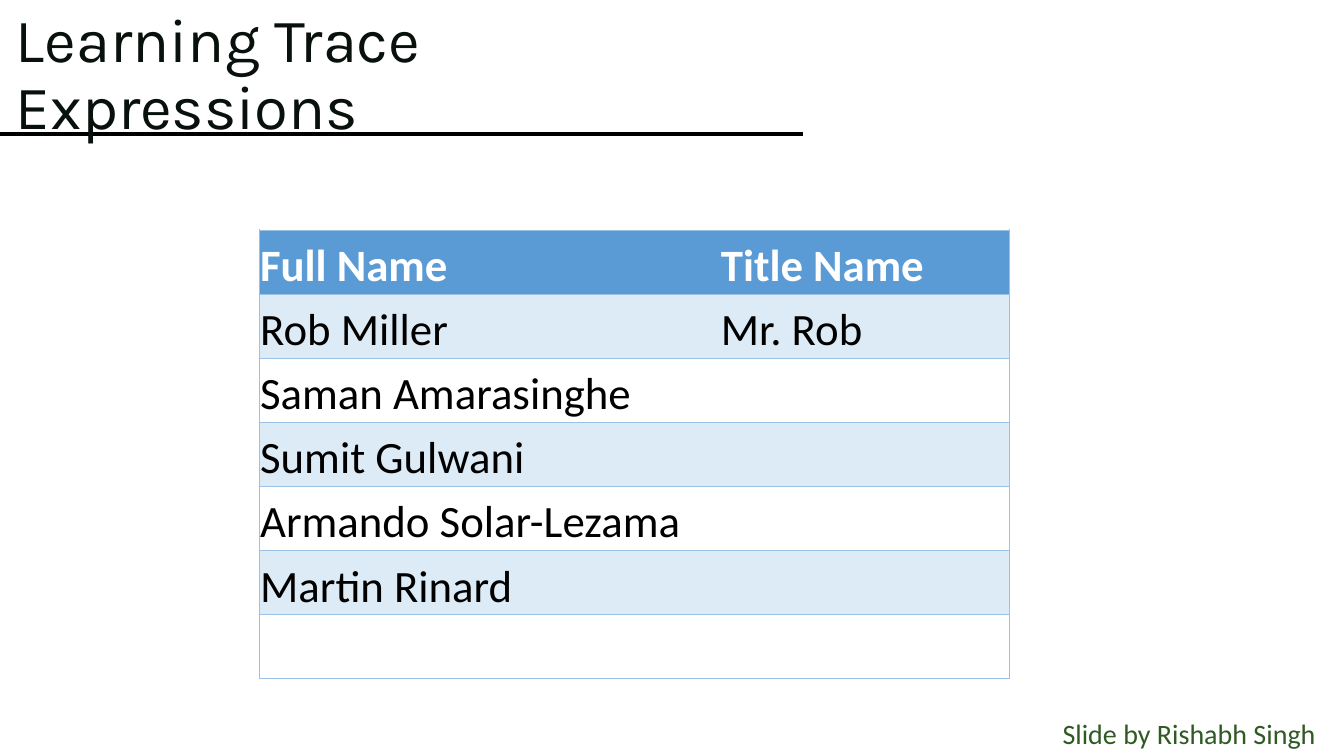
from lxml import etree
from pptx import Presentation
from pptx.dml.color import RGBColor
from pptx.enum.shapes import MSO_CONNECTOR
from pptx.enum.text import MSO_ANCHOR, MSO_AUTO_SIZE
from pptx.oxml.ns import qn
from pptx.util import Inches, Pt

COLORS = {
    "title": "08110B",
    "rule": "000000",
    "header": "5B9BD5",
    "header_text": "FFFFFF",
    "band": "DDEBF7",
    "body_text": "000000",
    "border": "9BC2E6",
    "credit": "2F5A24",
}
NO_STYLE = "{2D5ABB26-0587-4C30-8999-92F81FD0307C}"
NAMES = [
    ("Full Name", "Title Name"),
    ("Rob Miller", "Mr. Rob"),
    ("Saman Amarasinghe", ""),
    ("Sumit Gulwani", ""),
    ("Armando Solar-Lezama", ""),
    ("Martin Rinard", ""),
    ("", ""),
]


def color(name):
    return RGBColor.from_string(COLORS[name])


def add_run(paragraph, text, size, font, color_name, bold=False):
    run = paragraph.add_run()
    run.text = text
    run.font.size = Pt(size)
    run.font.name = font
    run.font.bold = bold
    run.font.color.rgb = color(color_name)


def add_title(slide, left, top, width, height):
    """Heading with the rule that starts at the slide edge."""
    rule_y = Inches(top + 1.3)
    rule = slide.shapes.add_connector(
        MSO_CONNECTOR.STRAIGHT, 0, rule_y, Inches(7.96), rule_y)
    rule.line.color.rgb = color("rule")
    rule.line.width = Pt(2.25)
    etree.SubElement(rule._element.spPr, qn("a:effectLst"))

    heading = slide.shapes.add_textbox(*map(Inches, (left, top, width, height)))
    frame = heading.text_frame
    frame.word_wrap = True
    frame.vertical_anchor = MSO_ANCHOR.MIDDLE
    paragraph = frame.paragraphs[0]
    paragraph.line_spacing = 0.9
    add_run(paragraph, "Learning Trace Expressions", 44, "Karla", "title")


def add_borders(cell, sides):
    """Draw the given sides, in schema order L, R, T, B; hide the others."""
    properties = cell._tc.get_or_add_tcPr()
    for side in "LRTB":
        line = etree.SubElement(properties, qn(f"a:ln{side}"), w=str(Pt(0.5)))
        if side in sides:
            fill = etree.SubElement(line, qn("a:solidFill"))
            etree.SubElement(fill, qn("a:srgbClr"), val=COLORS["border"])
        else:
            etree.SubElement(line, qn("a:noFill"))


def add_name_table(slide, left, top, width, height):
    frame = slide.shapes.add_table(
        len(NAMES), 2, *map(Inches, (left, top, width, height)))
    table = frame.table
    table._tbl.tblPr.find(qn("a:tableStyleId")).text = NO_STYLE
    full_name_width = 4.57
    table.columns[0].width = Inches(full_name_width)
    table.columns[1].width = Inches(width - full_name_width)

    for row, names in enumerate(NAMES):
        table.rows[row].height = Inches(height / len(NAMES))
        for column, name in enumerate(names):
            cell = table.cell(row, column)
            add_borders(cell, "RTB" if column else "LTB")
            cell.margin_left = cell.margin_right = cell.margin_top = Inches(0.01)
            cell.margin_bottom = 0
            cell.vertical_anchor = MSO_ANCHOR.BOTTOM
            if row % 2 or row == 0:
                cell.fill.solid()
                cell.fill.fore_color.rgb = color("band" if row else "header")
            else:
                cell.fill.background()
            if name:
                add_run(cell.text_frame.paragraphs[0], name, 32, "Calibri",
                        "body_text" if row else "header_text", bold=row == 0)


def add_credit(slide, left, top, width, height):
    credit = slide.shapes.add_textbox(*map(Inches, (left, top, width, height)))
    frame = credit.text_frame
    frame.word_wrap = False
    frame.auto_size = MSO_AUTO_SIZE.SHAPE_TO_FIT_TEXT
    add_run(frame.paragraphs[0], "Slide by Rishabh Singh", 20, "Calibri", "credit")


def main():
    deck = Presentation()
    deck.slide_width = Inches(13.33)
    deck.slide_height = Inches(7.5)
    slide = deck.slides.add_slide(deck.slide_layouts[6])
    add_title(slide, 0.06, 0.03, 7.51, 1.45)
    add_name_table(slide, 2.57, 2.28, 7.44, 4.45)
    add_credit(slide, 10.44, 7.06, 2.74, 0.44)
    deck.save("out.pptx")


if __name__ == "__main__":
    main()
